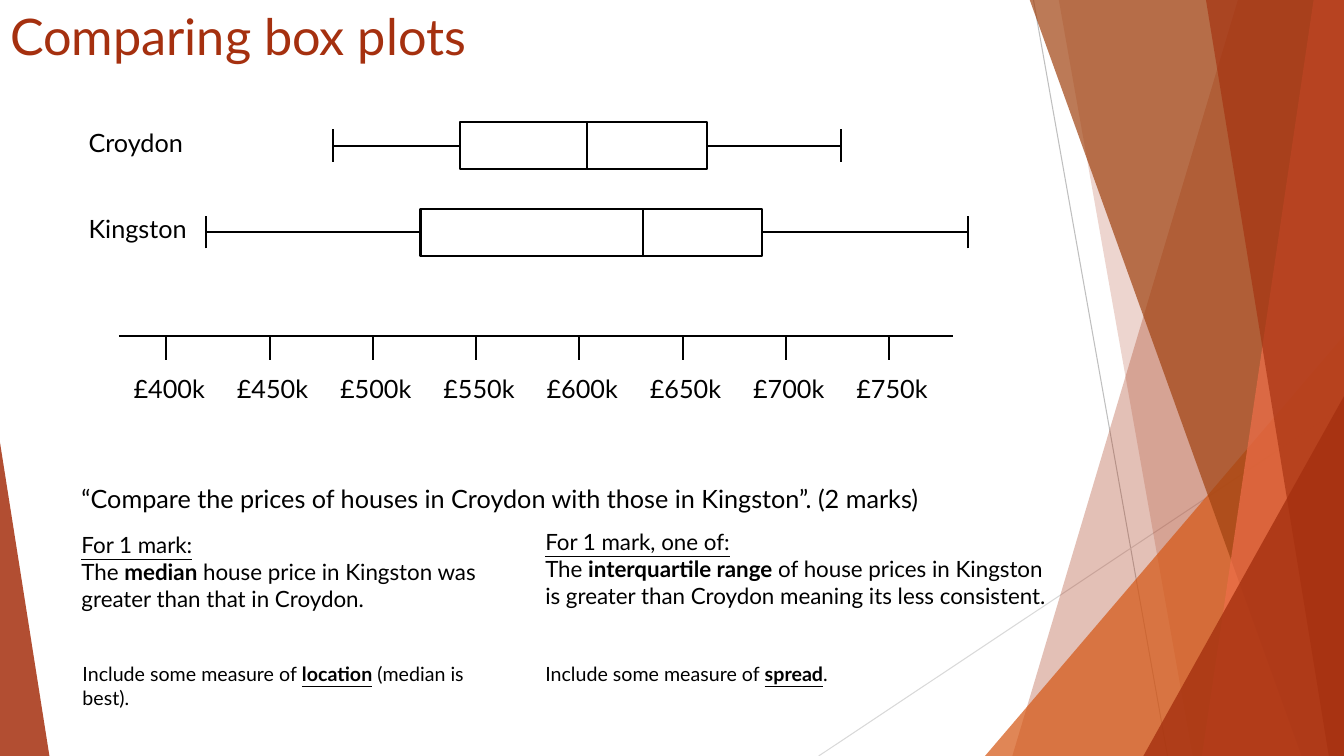
from lxml import etree
from pptx import Presentation
from pptx import util as u
from pptx.dml.color import RGBColor
from pptx.enum import shapes, text
from pptx.oxml.ns import qn

FONT = "Lato"
BLACK = RGBColor(0x00, 0x00, 0x00)
WHITE = RGBColor(0xFF, 0xFF, 0xFF)
RUST = RGBColor(0xA5, 0x30, 0x0F)
ORANGE = RGBColor(0xD5, 0x58, 0x16)
BROWN = RGBColor(0xA0, 0x42, 0x10)
CORAL = RGBColor(0xEE, 0x6E, 0x4A)
GREY = RGBColor(0xBF, 0xBF, 0xBF)
LIGHT_GREY = RGBColor(0xD9, 0xD9, 0xD9)

deck = Presentation()
deck.slide_width, deck.slide_height = u.Inches(13.33), u.Inches(7.5)
page = deck.slides.add_slide(deck.slide_layouts[5])


def add_line(x1, y1, x2, y2, color=BLACK, width=1.5):
    line = page.shapes.add_connector(
        shapes.MSO_CONNECTOR.STRAIGHT, *[u.Inches(v) for v in (x1, y1, x2, y2)])
    line.line.color.rgb = color
    line.line.width = u.Pt(width)
    etree.SubElement(line._element.spPr, qn("a:effectLst"))


def add_text(left, top, width, height, size, paragraphs, fill=None):
    """Each paragraph is a list of (text, style) spans; style holds b and/or u."""
    box = page.shapes.add_textbox(*[u.Inches(v) for v in (left, top, width, height)])
    if fill is not None:
        box.fill.solid()
        box.fill.fore_color.rgb = fill
    frame = box.text_frame
    frame.word_wrap = True
    frame.auto_size = text.MSO_AUTO_SIZE.SHAPE_TO_FIT_TEXT
    for number, spans in enumerate(paragraphs):
        para = frame.add_paragraph() if number else frame.paragraphs[0]
        for words, style in spans:
            span = para.add_run()
            span.text = words
            span.font.name, span.font.size = FONT, u.Pt(size)
            span.font.color.rgb = BLACK
            span.font.bold, span.font.underline = "b" in style, "u" in style
    return box


# Decorative lines and translucent panels
add_line(10.25, 0, 11.58, 7.5, GREY, 0.75)
add_line(13.33, 4.03, 8.12, 7.5, LIGHT_GREY, 0.75)

# Bands give the x of their left edge at top and bottom;
# triangles give left, top, width, height and apex position
panels = [
    ((12.28, 10.04), RUST, 30),
    ((10.5, 11.83), RUST, 20),
    ((9.77, 3.33, 3.56, 4.17, 1), ORANGE, 72),
    ((10.21, 12.91), BROWN, 70),
    ((13.03, 11.92), CORAL, 70),
    ((11.96, 13.18), RUST, 65),
    ((11.34, 3.93, 1.99, 3.57, 1), RUST, 80),
    ((0, 4.39, 0.49, 3.11, 0), RUST, 85),
]
for outline, color, opacity in panels:
    if len(outline) == 2:
        top_x, bottom_x = outline
        corners = [(u.Inches(x), u.Inches(y)) for x, y in (
            (top_x, -0.01), (13.33, -0.01), (13.33, 7.5), (bottom_x, 7.5))]
        builder = page.shapes.build_freeform(*corners[0])
        builder.add_line_segments(corners[1:], close=True)
        panel = builder.convert_to_shape()
    else:
        panel = page.shapes.add_shape(
            shapes.MSO_SHAPE.ISOSCELES_TRIANGLE, *[u.Inches(v) for v in outline[:4]])
        panel.adjustments[0] = outline[4]
    panel.shadow.inherit = False
    panel.line.fill.background()
    panel.fill.solid()
    panel.fill.fore_color.rgb = color
    tint = panel._element.spPr.find(qn("a:solidFill"))[0]
    etree.SubElement(tint, qn("a:alpha"), val=str(opacity * 1000))

# Title
title = page.shapes.title
title.left, title.top = u.Inches(0), u.Inches(0)
title.width, title.height = u.Inches(9.4), u.Inches(1.44)
title.text_frame.text = "Comparing box plots"
title.text_frame.vertical_anchor = text.MSO_ANCHOR.TOP
para = title.text_frame.paragraphs[0]
para.alignment = text.PP_ALIGN.LEFT
font = para.runs[0].font
font.name, font.size = FONT, u.Pt(36)
font.color.rgb = RUST

# Price axis, with each label centred on its tick by a tab stop
add_line(1.18, 3.33, 9.45, 3.33)
prices = range(400, 800, 50)
ticks = [1.65 + 1.024 * step for step in range(len(prices))]
for tick in ticks:
    add_line(tick, 3.33, tick, 3.57)
labels = "".join(f"\t£{price}k" for price in prices)
axis = add_text(1.18, 3.65, 9.09, 0.4, 18, [[(labels, "")]])
stops = etree.SubElement(axis.text_frame.paragraphs[0]._p.get_or_add_pPr(), qn("a:tabLst"))
for tick in ticks:
    etree.SubElement(stops, qn("a:tab"), pos=str(u.Inches(tick - 1.25)), algn="ctr")

# Box plots: minimum, lower quartile, median, upper quartile, maximum
plots = [
    ("Croydon", 1.21, (3.3, 4.56, 5.82, 7.01, 8.34)),
    ("Kingston", 2.07, (2.04, 4.17, 6.38, 7.56, 9.6)),
]
for town, top, (low, lower, median, upper, high) in plots:
    for start, end in ((lower, median), (median, upper)):
        half = page.shapes.add_shape(
            shapes.MSO_SHAPE.RECTANGLE, u.Inches(start), u.Inches(top),
            u.Inches(end - start), u.Inches(0.47))
        half.shadow.inherit = False
        half.fill.solid()
        half.fill.fore_color.rgb = WHITE
        half.line.color.rgb = BLACK
        half.line.width = u.Pt(1.5)
    middle = top + 0.235
    for quartile, extreme in ((upper, high), (lower, low)):
        add_line(quartile, middle, extreme, middle)
        add_line(extreme, middle + 0.16, extreme, middle - 0.16)
    add_text(0.78, top, 1.22, 0.4, 18, [[(town, "")]])

# Question
add_text(0.71, 4.75, 8.9, 0.4, 18, [[(
    "“Compare the prices of houses in Croydon with those in Kingston”. (2 marks)", "")]], WHITE)

# Model answers
add_text(5.31, 5.19, 5.27, 1.18, 16, [
    [("For 1 mark, one of:", "u")],
    [("The ", ""), ("interquartile range", "b"),
     (" of house prices in Kingston is greater than Croydon meaning its less consistent.", "")]])
add_text(0.71, 5.22, 4.25, 0.91, 16, [
    [("For 1 mark:", "u")],
    [("The ", ""), ("median", "b"),
     (" house price in Kingston was greater than that in Croydon.", "")]])

# Hints
hints = [(5.31, 3.15, 0.34, "spread", "."),
         (0.72, 4.33, 0.57, "location", " (median is best).")]
for left, width, height, measure, ending in hints:
    add_text(left, 6.52, width, height, 14, [
        [("Include some measure of ", ""), (measure, "bu"), (ending, "")]], WHITE)

deck.save("out.pptx")
